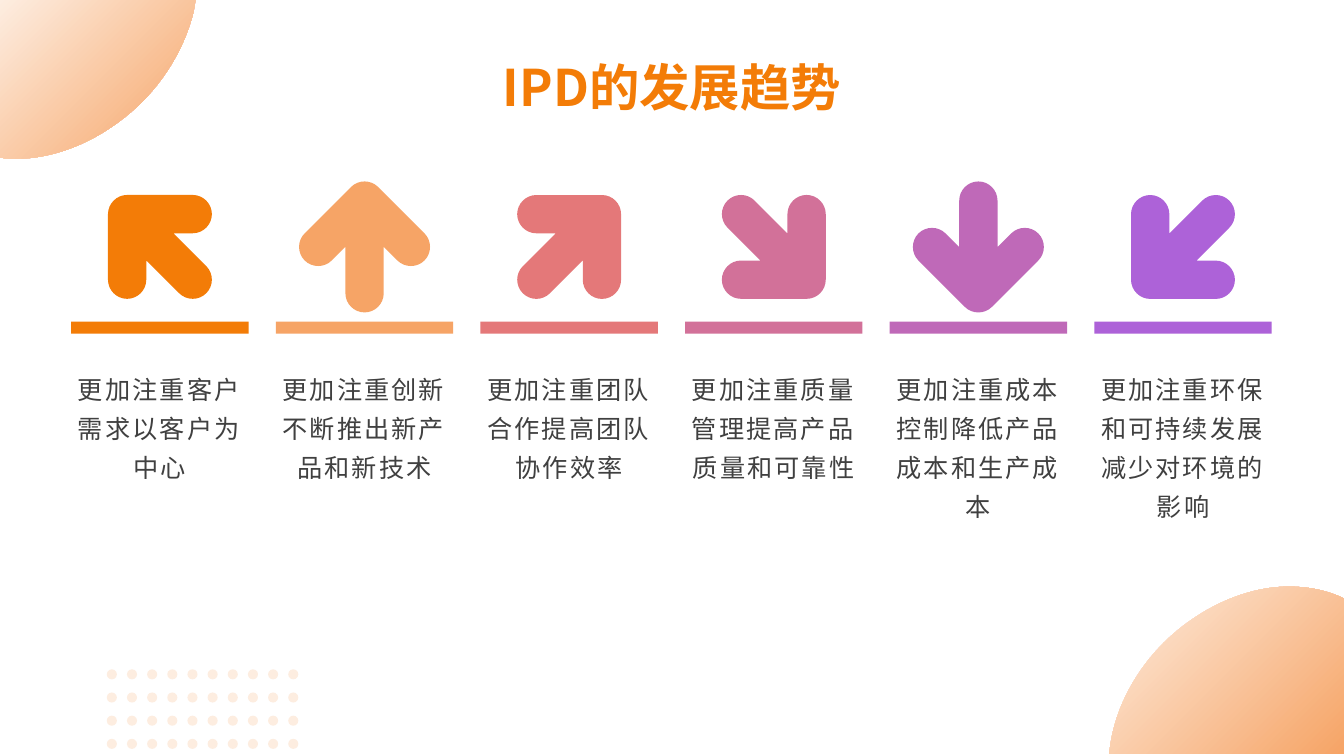
from math import cos, radians, sin

from lxml.etree import SubElement
from pptx import Presentation
from pptx.dml.color import RGBColor
from pptx.enum.shapes import MSO_SHAPE as SHAPE
from pptx.enum.text import MSO_ANCHOR as ANCHOR, PP_ALIGN as ALIGN
from pptx.oxml.ns import qn
from pptx.util import Inches, Pt

W, H = 40 / 3, 7.5
FONT = "Noto Sans CJK SC"
PALE, PEACH, ORANGE, GREY = "FDEDE0", "F6A466", "F37C07", "404040"
LEFT, PITCH, COL_W = W / 20, 2.03, 1.84
POINT_LEFT, POINT_RIGHT = 1, -1
TRENDS = [
    (ORANGE, POINT_LEFT, 45, "更加注重客户需求以客户为中心"),
    (PEACH, POINT_LEFT, 90, "更加注重创新不断推出新产品和新技术"),
    ("E47879", POINT_RIGHT, 315, "更加注重团队合作提高团队协作效率"),
    ("D27199", POINT_RIGHT, 45, "更加注重质量管理提高产品质量和可靠性"),
    ("BF69B8", POINT_LEFT, 270, "更加注重成本控制降低产品成本和生产成本"),
    ("AD62D8", POINT_LEFT, 315, "更加注重环保和可持续发展减少对环境的影响"),
]
TOP_LEFT = [[(0, 0)], [(1.94, 0)], [(1.92, 0.12)],
            [(1.84, 0.44), (1.66, 0.77), (1.38, 1.04)],
            [(0.98, 1.42), (0.48, 1.61), (0.04, 1.57)], [(0, 1.56)]]
BOTTOM_RIGHT = [[(1.78, 0)], [(1.96, 0), (2.13, 0.03), (2.29, 0.1)],
                [(2.33, 0.12)], [(2.33, 1.66)], [(0, 1.66)], [(0.01, 1.59)],
                [(0.06, 1.22), (0.25, 0.84), (0.57, 0.53)],
                [(0.93, 0.19), (1.38, 0), (1.78, 0)]]


def rgb(color):
    """Turn a hex string into a colour."""
    return RGBColor.from_string(color)


def paint(sp, color):
    """Give a shape a plain fill, no line and no shadow."""
    sp.fill.solid()
    sp.fill.fore_color.rgb = rgb(color)
    sp.line.fill.background()
    sp.shadow.inherit = False


def write(tf, text, size, color, bold=False, line=1.0, spacing=0):
    """Write one centred paragraph into a text frame."""
    tf.word_wrap = True
    p = tf.paragraphs[0]
    p.alignment, p.line_spacing = ALIGN.CENTER, line
    r = p.add_run()
    r.text = text
    for name, value in {"size": Pt(size), "bold": bold, "name": FONT}.items():
        setattr(r.font, name, value)
    r.font.color.rgb = rgb(color)
    props = r.font._element
    props.set("spc", str(int(spacing * 100)))
    SubElement(props, qn("a:ea")).set("typeface", FONT)


def outline(s, segments, x, y, width, height):
    """Draw a closed outline of lines and cubic curves inside a box."""
    x, y, right, bottom = map(Inches, (x, y, x + width, y + height))
    builder = s.shapes.build_freeform(x, y)
    builder.add_line_segments([(right, y), (right, bottom), (x, bottom)])
    sp = builder.convert_to_shape()
    route = next(sp.element.iter(qn("a:path")))
    for step in list(route):
        route.remove(step)
    for i, seg in enumerate(segments):
        tag = "a:cubicBezTo" if len(seg) == 3 else "a:lnTo" if i else "a:moveTo"
        step = SubElement(route, qn(tag))
        for px, py in seg:
            pt = SubElement(step, qn("a:pt"))
            pt.set("x", str(Inches(px)))
            pt.set("y", str(Inches(py)))
    SubElement(route, qn("a:close"))
    return sp


def arc(cx, cy, radius, start, quarters):
    """List the start point and quarter-circle curves of an arc."""
    def at(angle, bulge=0.0):
        """Find a point on the circle, moved along its tangent."""
        c, d = cos(radians(angle)), sin(radians(angle))
        return cx + radius * (c - bulge * d), cy + radius * (d + bulge * c)

    turns = [start + 90 * i for i in range(quarters)]
    return [[at(start)]] + [[at(a, 0.55), at(a + 90, -0.55), at(a + 90)] for a in turns]


def corner(s, segments, x, y, width, height):
    """Draw a corner blob with a diagonal gradient."""
    sp = outline(s, segments, x, y, width, height)
    paint(sp, PALE)
    sp.fill.gradient()
    sp.fill.gradient_angle = 315
    for stop, color in zip(sp.fill.gradient_stops, (PALE, PEACH)):
        stop.color.rgb = rgb(color)


def dots(s, x, y, cols=10, rows=4, dx=0.2, dy=0.23, size=0.1):
    """Draw a grid of small dots."""
    for i in range(cols):
        for j in range(rows):
            box = (x + i * dx, y + j * dy, size, size)
            paint(s.shapes.add_shape(SHAPE.OVAL, *map(Inches, box)), PALE)


def backdrop(s):
    """Draw the corner blobs and dots and hand them to the layout."""
    corner(s, TOP_LEFT, 0, 0, 1.94, 1.57)
    corner(s, BOTTOM_RIGHT, W - 2.33, 5.82, 2.33, 1.66)
    dots(s, 1.06, 6.64)
    for sp in list(s.shapes):
        if not sp.is_placeholder:
            s.slide_layout.shapes.element.append(sp.element)


def arrow(s, x, y, size, side, angle, color, radius=0.19):
    """Draw a round-ended arrow that points to a side, then turn it."""
    mid = size / 2
    reach = mid - radius
    notch = radius * 2 ** 0.5 - reach + radius
    segments = (arc(0, -reach, radius, 225, 1)
                + arc(reach, 0, radius, -45, 2) + [[(radius, notch)]]
                + arc(0, reach, radius, 0, 2) + [[(-radius, notch)]]
                + arc(-reach, 0, radius, 45, 2))
    turned = [[(mid + side * py, mid + px) for px, py in seg] for seg in segments]
    sp = outline(s, turned, x, y, size, size)
    paint(sp, color)
    sp.rotation = angle


def trend(s, x, width, color, side, angle, text):
    """Place the arrow, caption and bar of one trend."""
    size = 1.3
    arrow(s, x + (width - size) / 2, 1.8, size, side, angle, color)
    caption = s.shapes.add_textbox(*map(Inches, (x, 3.57, width, 3.09)))
    write(caption.text_frame, text, 18, GREY, line=1.3, spacing=1.5)
    bar = (x + 0.04, 3.19, width - 0.08, 0.12)
    paint(s.shapes.add_shape(SHAPE.RECTANGLE, *map(Inches, bar)), color)


def heading(s, text, x, y, width, height):
    """Place and fill the title."""
    sp = s.shapes.title
    for name, value in zip(("left", "top", "width", "height"), (x, y, width, height)):
        setattr(sp, name, Inches(value))
    sp.text_frame.vertical_anchor = ANCHOR.MIDDLE
    write(sp.text_frame, text, 36, ORANGE, bold=True)


def main():
    """Build the slide and save it."""
    prs = Presentation()
    prs.slide_width, prs.slide_height = Inches(W), Inches(H)
    s = prs.slides.add_slide(prs.slide_layouts[5])
    backdrop(s)
    heading(s, "IPD的发展趋势", LEFT, 0.5, W - 2 * LEFT, 0.71)
    for i, (color, side, angle, text) in enumerate(TRENDS):
        trend(s, LEFT + i * PITCH, COL_W, color, side, angle, text)
    prs.save("out.pptx")


if __name__ == "__main__":
    main()
